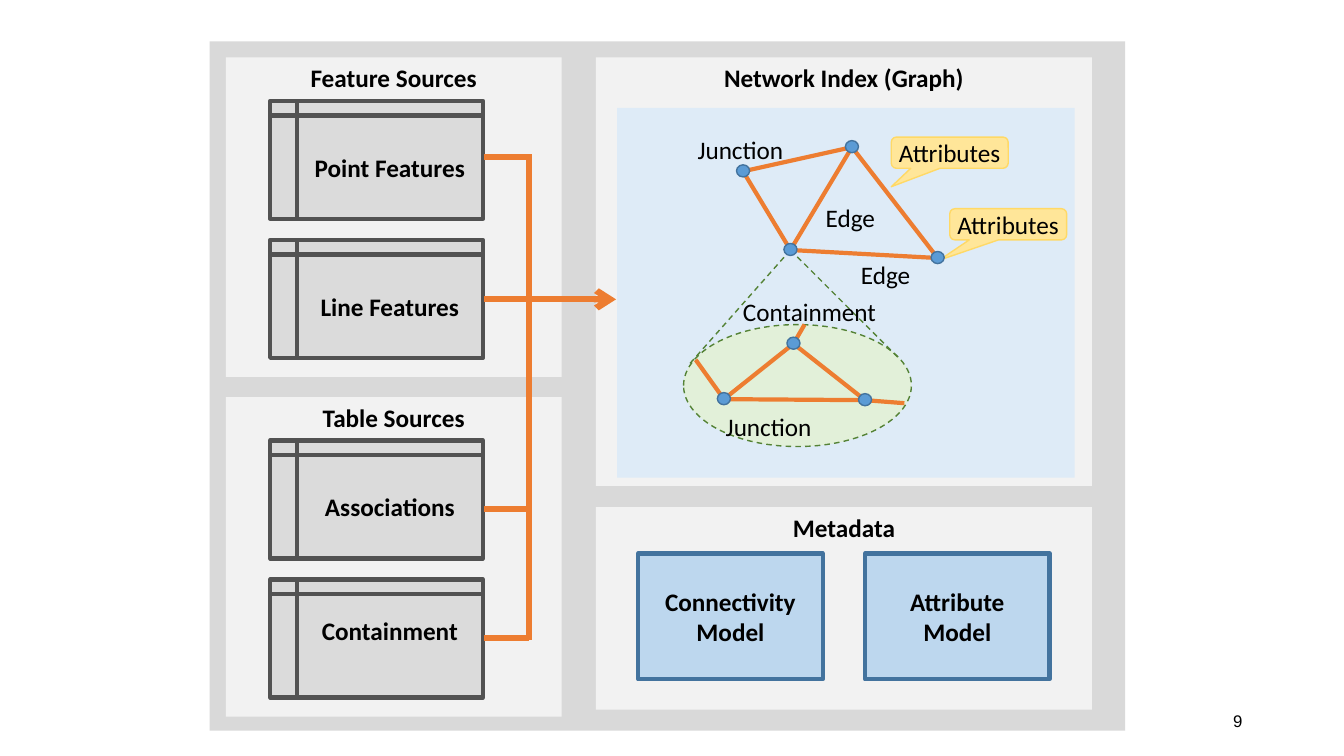
from dataclasses import dataclass

from lxml.etree import SubElement
from pptx import Presentation
from pptx.dml.color import RGBColor
from pptx.enum.dml import MSO_LINE
from pptx.enum.shapes import MSO_CONNECTOR, MSO_SHAPE as Preset
from pptx.enum.text import MSO_ANCHOR as Anchor, PP_ALIGN as Align
from pptx.oxml.ns import qn
from pptx.util import Inches, Pt

COLORS = {
    "text": "000000", "frame": "D9D9D9", "panel": "F2F2F2", "canvas": "DEEBF7",
    "model": "BDD7EE", "blue line": "43739E", "source": "DBDBDB",
    "source line": "525252", "flow": "ED7D31", "container": "E2F0D9",
    "container line": "548235", "callout": "FFE699", "callout line": "FFD966",
    "junction": "5B9BD5",
}
COLUMNS, ROWS = 133.3, 75
NODE = 1.3


@dataclass
class Box:
    left: float
    top: float
    width: float
    height: float

    def inner(self, left, top, width, height):
        return Box(self.left + left, self.top + top, width, height)

    def point(self, x, y):
        return self.left + x, self.top + y


deck = Presentation()
deck.slide_width, deck.slide_height = Inches(13.33), Inches(7.5)
slide = deck.slides.add_slide(deck.slide_layouts[6])
column = deck.slide_width / COLUMNS
row = deck.slide_height / ROWS


def color(name):
    return RGBColor.from_string(COLORS[name])


def emu(box):
    return (round(box.left * column), round(box.top * row),
            round(box.width * column), round(box.height * row))


def write(frame, lines, size=18, font="Calibri", bold=False,
          align=Align.CENTER, anchor=Anchor.MIDDLE):
    frame.word_wrap = True
    frame.vertical_anchor = anchor
    for index, line in enumerate(lines):
        paragraph = frame.add_paragraph() if index else frame.paragraphs[0]
        paragraph.alignment = align
        run = paragraph.add_run()
        run.text = line
        run.font.name, run.font.size, run.font.bold = font, Pt(size), bold
        run.font.color.rgb = color("text")


def draw(box, fill, preset=Preset.RECTANGLE, outline=None, weight=1):
    shape = slide.shapes.add_shape(preset, *emu(box))
    shape.shadow.inherit = False
    shape.fill.solid()
    shape.fill.fore_color.rgb = color(fill)
    if outline:
        shape.line.color.rgb = color(outline)
        shape.line.width = Pt(weight)
    else:
        shape.line.fill.background()
    return shape


def connect(start, end, stroke="flow", weight=3, dashed=False, arrow=False):
    (x1, y1), (x2, y2) = start, end
    link = slide.shapes.add_connector(
        MSO_CONNECTOR.STRAIGHT, round(x1 * column), round(y1 * row),
        round(x2 * column), round(y2 * row))
    link.line.color.rgb = color(stroke)
    link.line.width = Pt(weight)
    if dashed:
        link.line.dash_style = MSO_LINE.DASH
    properties = link._element.spPr
    if arrow:
        SubElement(properties.find(qn("a:ln")), qn("a:tailEnd"), type="arrow")
    SubElement(properties, qn("a:effectLst"))


def label(box, text, **style):
    write(slide.shapes.add_textbox(*emu(box)).text_frame, [text], **style)


def panel(box, heading):
    write(draw(box, "panel").text_frame, [heading], bold=True, anchor=Anchor.TOP)


def sources(box, heading, names):
    panel(box, heading)
    for index, name in enumerate(names):
        store = draw(box.inner(4.4, 4.3 + 13.8 * index, 21.1, 11.7), "source",
                     Preset.FLOWCHART_INTERNAL_STORAGE, "source line", 3)
        write(store.text_frame, [name], bold=True)
        if name == "Containment":
            store.text_frame.margin_bottom = Inches(0.35)


def metadata(box):
    panel(box, "Metadata")
    for index, name in enumerate(["Connectivity", "Attribute"]):
        model = draw(box.inner(4.2 + 22.5 * index, 4.6, 18.3, 12.5),
                     "model", outline="blue line", weight=3)
        write(model.text_frame, [name, "Model"], bold=True)


def flows(box):
    trunk = 4.5
    for y, length in [(0.3, trunk), (14.4, 13.1), (35.2, trunk), (48, trunk)]:
        connect(box.point(0, y), box.point(length, y), weight=4.5,
                arrow=length > trunk)
    connect(box.point(trunk, 0), box.point(trunk, box.height), weight=4.5)


def graph(box):
    draw(box, "canvas")
    junctions = {
        "west": (12.5, 6.3), "hub": (17.2, 14.1), "north": (23.3, 3.9),
        "east": (31.8, 14.9), "inner west": (10.6, 28.9),
        "inner east": (24.6, 29), "inner north": (17.5, 23.4),
    }
    spots = {name: box.point(*at) for name, at in junctions.items()}

    for start, end in [("west", "north"), ("west", "hub"), ("hub", "east"),
                       ("hub", "north"), ("north", "east")]:
        connect(spots[start], spots[end])

    draw(box.inner(6.6, 21.5, 22.6, 12.1), "container", Preset.OVAL,
         "container line").line.dash_style = MSO_LINE.DASH
    for rim in [(7.2, 25.4), (28.1, 25)]:
        connect(spots["hub"], box.point(*rim), "container line", 1, dashed=True)

    for start, end in [("inner west", "inner east"), ("inner west", "inner north"),
                       ("inner north", "inner east")]:
        connect(spots[start], spots[end])
    for start, rim in [("inner west", (7.8, 25)), ("inner east", (28.5, 29.3)),
                       ("inner north", (18.6, 21.5))]:
        connect(spots[start], box.point(*rim))

    for left, top, tip in [(27.2, 2.9, (-0.5, 1.09)), (33, 10, (-0.59, 1.15))]:
        callout = draw(box.inner(left, top, 11.6, 3.1), "callout",
                       Preset.ROUNDED_RECTANGULAR_CALLOUT, "callout line")
        callout.adjustments[0], callout.adjustments[1] = tip
        frame = callout.text_frame
        frame.margin_left = Inches(0.06)
        frame.margin_right = frame.margin_top = frame.margin_bottom = 0
        write(frame, ["Attributes"], align=Align.LEFT)

    for text, left, top, width in [
            ("Edge", 19.7, 8.9, 8.1), ("Junction", 7, 2.1, 13.7),
            ("Containment", 11.5, 18.2, 16.3), ("Edge", 23.2, 14.5, 7.6),
            ("Junction", 9.8, 29.6, 11)]:
        label(box.inner(left, top, width, 4), text, align=Align.LEFT)

    for x, y in spots.values():
        draw(Box(x - NODE / 2, y - NODE / 2, NODE, 1.2), "junction",
             Preset.OVAL, "blue line")


def network_index(box):
    panel(box, "Network Index (Graph)")
    graph(box.inner(2.1, 5, 45.4, 36.7))


def architecture(box):
    draw(box, "frame")
    sources(box.inner(1.6, 1.6, 33.3, 31.7), "Feature Sources",
            ["Point Features", "Line Features"])
    sources(box.inner(1.6, 35.3, 33.3, 31.7), "Table Sources",
            ["Associations", "Containment"])
    network_index(box.inner(38.3, 1.6, 49.2, 42.5))
    metadata(box.inner(38.3, 46.2, 49.2, 20.1))
    flows(box.inner(27.2, 11.2, 13.1, 48.2))


def main():
    label(Box(94.2, 69.5, 30, 4), "9", size=12, font="Arial", align=Align.RIGHT)
    architecture(Box(20.8, 4.1, 90.8, 68.4))
    deck.save("out.pptx")


if __name__ == "__main__":
    main()
